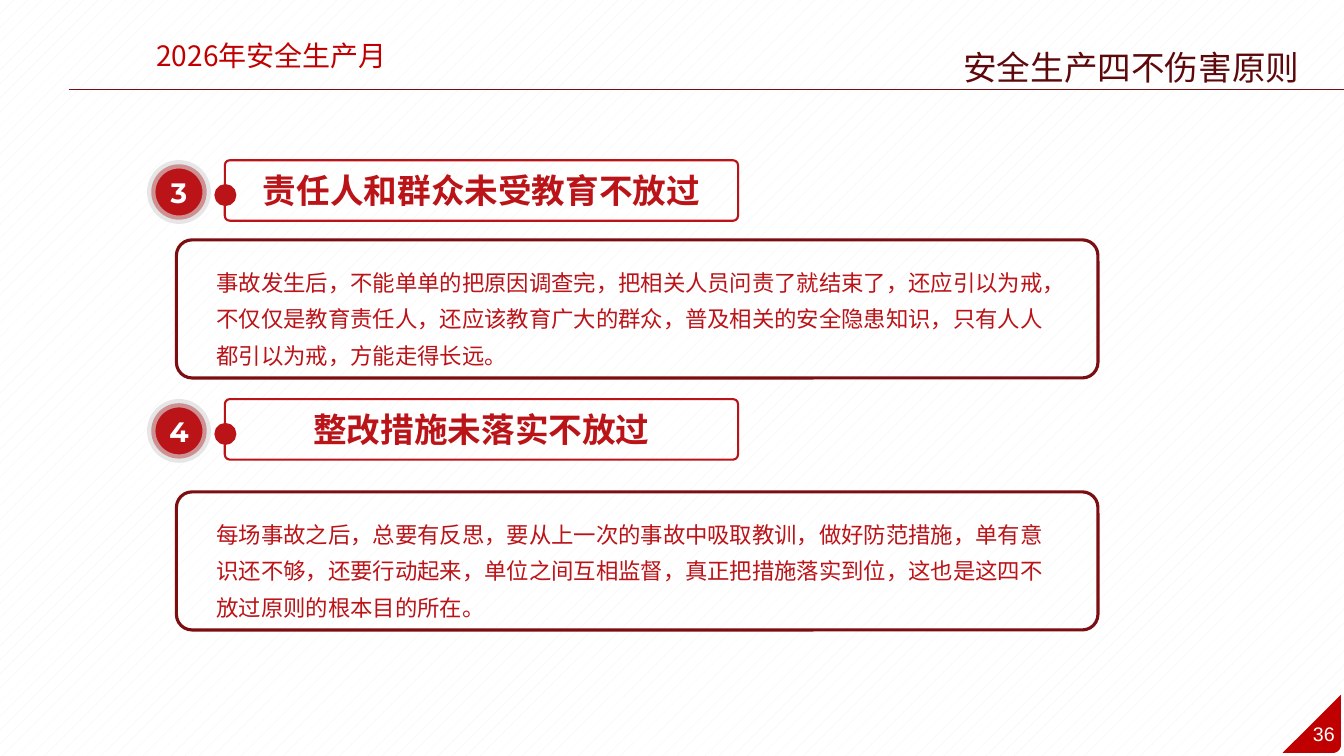
import math

import lxml.etree
import pptx
import pptx.dml.color
import pptx.enum.dml
import pptx.enum.shapes
import pptx.enum.text
import pptx.oxml.ns
import pptx.util

Inches = pptx.util.Inches
Pt = pptx.util.Pt
RGBColor = pptx.dml.color.RGBColor
MSO_SHAPE = pptx.enum.shapes.MSO_SHAPE
PP_ALIGN = pptx.enum.text.PP_ALIGN
MSO_ANCHOR = pptx.enum.text.MSO_ANCHOR
qn = pptx.oxml.ns.qn

RED = RGBColor(0xBA, 0x13, 0x18)
BRIGHT_RED = RGBColor(0xC0, 0x00, 0x00)
DARK_RED = RGBColor(0x7C, 0x0D, 0x10)
TITLE_RED = RGBColor(0x5D, 0x09, 0x0C)
RING_GREY = RGBColor(0xD9, 0xD9, 0xD9)
PALE_GREY = RGBColor(0xF2, 0xF2, 0xF2)
WHITE = RGBColor(0xFF, 0xFF, 0xFF)
CHINESE_FONT = "Noto Sans CJK SC"


def write_text(shape, text, size, color, font=CHINESE_FONT, bold=False,
               align=PP_ALIGN.CENTER, anchor=MSO_ANCHOR.TOP, wrap=True, spacing=None):
    frame = shape.text_frame
    frame.auto_size = pptx.enum.text.MSO_AUTO_SIZE.NONE
    frame.word_wrap = wrap
    frame.vertical_anchor = anchor
    paragraph = frame.paragraphs[0]
    paragraph.alignment = align
    paragraph.line_spacing = spacing
    run = paragraph.add_run()
    run.text = text
    run.font.size = Pt(size)
    run.font.bold = bold
    run.font.color.rgb = color
    run.font.name = font
    east_asian = lxml.etree.SubElement(run.font._element, qn("a:ea"))
    east_asian.set("typeface", font)


def add_box(kind, left, top, width, height, line, line_width, fill=None, corner=None):
    shape = slide.shapes.add_shape(
        kind, Inches(left), Inches(top), Inches(width), Inches(height))
    shape.shadow.inherit = False
    if fill is None:
        shape.fill.background()
    else:
        shape.fill.solid()
        shape.fill.fore_color.rgb = fill
    shape.line.color.rgb = line
    shape.line.width = Pt(line_width)
    if corner is not None:
        shape.adjustments[0] = corner
    return shape


presentation = pptx.Presentation()
presentation.slide_width = Inches(13.33)
presentation.slide_height = Inches(7.5)
slide = presentation.slides.add_slide(presentation.slide_layouts[5])

# Background
background = slide.background.fill
background.patterned()
background.pattern = pptx.enum.dml.MSO_PATTERN.PERCENT_5
background.fore_color.rgb = PALE_GREY
background.back_color.rgb = WHITE

# Header: rule, campaign name and title
rule = slide.shapes.add_connector(
    pptx.enum.shapes.MSO_CONNECTOR.STRAIGHT,
    Inches(0.68), Inches(0.89), Inches(13.33), Inches(0.89))
rule.line.color.rgb = DARK_RED
rule.line.width = Pt(0.75)
lxml.etree.SubElement(rule._element.spPr, qn("a:effectLst"))

campaign = slide.shapes.add_textbox(Inches(0.98), Inches(0.33), Inches(3.43), Inches(0.44))
write_text(campaign, "2026年安全生产月", 20, BRIGHT_RED)

title = slide.shapes.title
title.left, title.top = Inches(9.11), Inches(0.42)
title.width, title.height = Inches(4.22), Inches(0.5)
write_text(title, "安全生产四不伤害原则", 24, TITLE_RED)

# Page corner: a triangle with its lower right corner rounded
corner_points = []
for step in range(7):
    angle = math.radians(15 * step)
    corner_points.append((Inches(13.22 + 0.08 * math.cos(angle)),
                          Inches(7.39 + 0.08 * math.sin(angle))))
builder = slide.shapes.build_freeform(Inches(13.3), Inches(6.89))
builder.add_line_segments(corner_points + [(Inches(12.72), Inches(7.47))], close=True)
page_corner = builder.convert_to_shape()
page_corner.shadow.inherit = False
page_corner.fill.solid()
page_corner.fill.fore_color.rgb = BRIGHT_RED
page_corner.line.fill.background()

page_number = slide.shapes.add_textbox(
    Inches(12.91), Inches(7.11), Inches(0.44), Inches(0.34))
write_text(page_number, "36", 14, WHITE, font="Arial", wrap=False)

# Principles: number, heading, explanation, top of badge, top of explanation
principles = [
    ("3", "责任人和群众未受教育不放过",
     "事故发生后，不能单单的把原因调查完，把相关人员问责了就结束了，还应引以为戒，"
     "不仅仅是教育责任人，还应该教育广大的群众，普及相关的安全隐患知识，只有人人"
     "都引以为戒，方能走得长远。", 1.63, 2.38),
    ("4", "整改措施未落实不放过",
     "每场事故之后，总要有反思，要从上一次的事故中吸取教训，做好防范措施，单有意"
     "识还不够，还要行动起来，单位之间互相监督，真正把措施落实到位，这也是这四不"
     "放过原则的根本目的所在。", 4.0, 4.88),
]
for number, heading, explanation, badge_top, frame_top in principles:
    # Numbered badge with a translucent ring
    badge = add_box(MSO_SHAPE.OVAL, 1.5, badge_top, 0.55, 0.55, RING_GREY, 6, fill=RED)
    ring_color = badge.line._ln.find(".//" + qn("a:srgbClr"))
    lxml.etree.SubElement(ring_color, qn("a:alpha")).set("val", "63000")
    write_text(badge, number, 20, WHITE, font="Montserrat", bold=True,
               anchor=MSO_ANCHOR.MIDDLE)

    # Heading box with a dot on its left side
    heading_box = add_box(MSO_SHAPE.ROUNDED_RECTANGLE, 2.23, badge_top - 0.04, 5.09, 0.6,
                          RED, 1.5, corner=0.082)
    write_text(heading_box, heading, 24, RED, bold=True,
               anchor=MSO_ANCHOR.MIDDLE, wrap=False)
    add_box(MSO_SHAPE.FLOWCHART_CONNECTOR, 2.14, badge_top + 0.21, 0.19, 0.19,
            RED, 2, fill=RED)

    # Explanation and its frame
    body = slide.shapes.add_textbox(
        Inches(2.05), Inches(frame_top + 0.15), Inches(8.48), Inches(1.15))
    write_text(body, explanation, 16, RED, align=PP_ALIGN.LEFT, spacing=1.35)
    add_box(MSO_SHAPE.ROUNDED_RECTANGLE, 1.75, frame_top, 9.14, 1.37,
            DARK_RED, 2.25, corner=0.113)

presentation.save("out.pptx")
